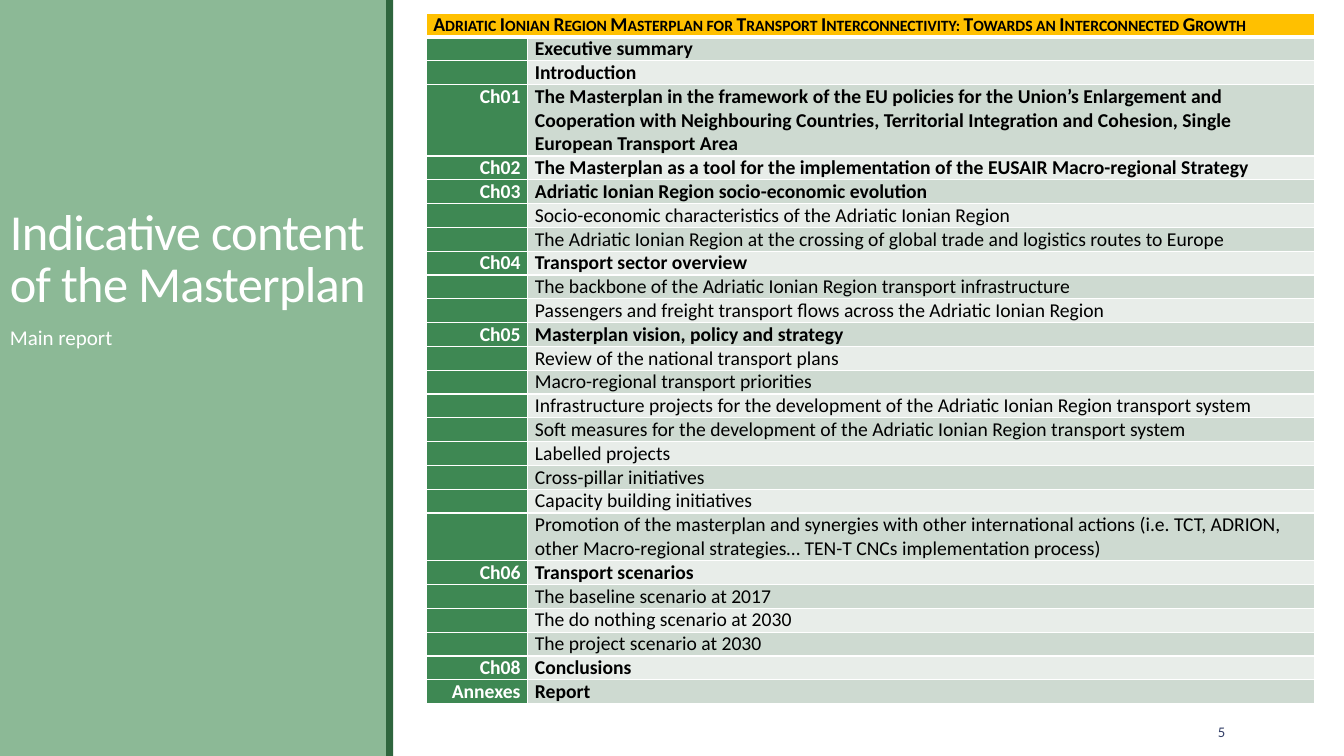
"""Build the slide listing the indicative content of the Masterplan main report."""
from math import ceil

from lxml.etree import SubElement
from pptx import Presentation
from pptx.dml.color import RGBColor
from pptx.enum.shapes import MSO_SHAPE
from pptx.enum.text import MSO_ANCHOR, PP_ALIGN
from pptx.oxml.ns import qn
from pptx.util import Cm, Pt

TITLE = "Indicative content of the Masterplan"
SUBTITLE = "Main report"
PAGE_NUMBER = "5"
HEADING = "Adriatic Ionian Region Masterplan for Transport Interconnectivity: Towards an Interconnected Growth"
CHAPTERS = [
    ("", "Executive summary", []),
    ("", "Introduction", []),
    ("Ch01", "The Masterplan in the framework of the EU policies for the Union’s Enlargement and "
     "Cooperation with Neighbouring Countries, Territorial Integration and Cohesion, Single "
     "European Transport Area", []),
    ("Ch02", "The Masterplan as a tool for the implementation of the EUSAIR Macro-regional Strategy", []),
    ("Ch03", "Adriatic Ionian Region socio-economic evolution", [
        "Socio-economic characteristics of the Adriatic Ionian Region",
        "The Adriatic Ionian Region at the crossing of global trade and logistics routes to Europe",
    ]),
    ("Ch04", "Transport sector overview", [
        "The backbone of the Adriatic Ionian Region transport infrastructure",
        "Passengers and freight transport flows across the Adriatic Ionian Region",
    ]),
    ("Ch05", "Masterplan vision, policy and strategy", [
        "Review of the national transport plans",
        "Macro-regional transport priorities",
        "Infrastructure projects for the development of the Adriatic Ionian Region transport system",
        "Soft measures for the development of the Adriatic Ionian Region transport system",
        "Labelled projects",
        "Cross-pillar initiatives",
        "Capacity building initiatives",
        "Promotion of the masterplan and synergies with other international actions (i.e. TCT, ADRION, "
        "other Macro-regional strategies… TEN-T CNCs implementation process)",
    ]),
    ("Ch06", "Transport scenarios", [
        "The baseline scenario at 2017",
        "The do nothing scenario at 2030",
        "The project scenario at 2030",
    ]),
    ("Ch08", "Conclusions", []),
    ("Annexes", "Report", []),
]

FONT = "Calibri"
WHITE = RGBColor(0xFF, 0xFF, 0xFF)
BLACK = RGBColor(0x00, 0x00, 0x00)
NAVY = RGBColor(0x34, 0x40, 0x68)
PANEL_GREEN = RGBColor(0x8C, 0xB9, 0x96)
EDGE_GREEN = RGBColor(0x2F, 0x66, 0x3E)
LABEL_GREEN = RGBColor(0x3E, 0x88, 0x53)
AMBER = RGBColor(0xFF, 0xC0, 0x00)
BANDS = [RGBColor(0xCE, 0xDA, 0xD1), RGBColor(0xE8, 0xED, 0xE9)]

SLIDE_WIDTH, SLIDE_HEIGHT = 33.87, 19.05
PANEL_WIDTH, EDGE_WIDTH = 9.73, 0.18
TABLE_LEFT, TABLE_TOP = 10.74, 0.33
COLUMN_WIDTHS = [2.56, 19.84]
LINE_HEIGHT, LINE_CHARACTERS = 0.6, 90
CELL_SIZE = 14


def write_text(frame, text, size=CELL_SIZE, color=BLACK, bold=False, align=PP_ALIGN.LEFT,
               line_spacing=None, tracking=None, small_caps=False):
    frame.word_wrap = True
    paragraph = frame.paragraphs[0]
    paragraph.alignment = align
    if line_spacing:
        paragraph.line_spacing = line_spacing
    if not text:
        paragraph._p.get_or_add_endParaRPr().set("sz", str(size * 100))
        return
    run = paragraph.add_run()
    run.text = text
    run.font.name = FONT
    run.font.size = Pt(size)
    run.font.bold = bold
    run.font.color.rgb = color
    if tracking is not None:
        run.font._element.set("spc", str(int(tracking * 100)))
    if small_caps:
        run.font._element.set("cap", "small")


def add_panel(slide, left, width, color):
    shape = slide.shapes.add_shape(MSO_SHAPE.RECTANGLE, Cm(left), Cm(0), Cm(width), Cm(SLIDE_HEIGHT))
    shape.shadow.inherit = False
    shape.fill.solid()
    shape.fill.fore_color.rgb = color
    shape.line.fill.background()


def add_text_box(slide, left, top, width, height, text, anchor=MSO_ANCHOR.TOP, **text_format):
    box = slide.shapes.add_textbox(Cm(left), Cm(top), Cm(width), Cm(height))
    box.text_frame.vertical_anchor = anchor
    write_text(box.text_frame, text, **text_format)


def style_cell(cell, color, top_border=1, bottom_border=1):
    cell.margin_left = cell.margin_right = Cm(0.18)
    cell.margin_top = cell.margin_bottom = Cm(0)
    properties = cell._tc.get_or_add_tcPr()
    for side, width in (("L", 1), ("R", 1), ("T", top_border), ("B", bottom_border)):
        line = SubElement(properties, qn(f"a:ln{side}"), w=str(Pt(width)))
        SubElement(SubElement(line, qn("a:solidFill")), qn("a:srgbClr"), val=str(WHITE))
    cell.fill.solid()
    cell.fill.fore_color.rgb = color


def add_contents_table(slide):
    entries = []
    for label, chapter, sections in CHAPTERS:
        entries.append((label, chapter, True))
        entries.extend(("", section, False) for section in sections)
    line_counts = [1] + [ceil(len(text) / LINE_CHARACTERS) for _, text, _ in entries]
    table = slide.shapes.add_table(
        len(line_counts), len(COLUMN_WIDTHS), Cm(TABLE_LEFT), Cm(TABLE_TOP),
        Cm(sum(COLUMN_WIDTHS)), Cm(sum(line_counts) * LINE_HEIGHT)).table
    table.first_row = table.horz_banding = False
    for column, width in zip(table.columns, COLUMN_WIDTHS):
        column.width = Cm(width)
    for row, count in zip(table.rows, line_counts):
        row.height = Cm(count * LINE_HEIGHT)

    heading = table.cell(0, 0)
    for column in range(len(COLUMN_WIDTHS)):
        style_cell(table.cell(0, column), AMBER, bottom_border=3)
    heading.merge(table.cell(0, 1))
    write_text(heading.text_frame, HEADING, bold=True, small_caps=True)
    for index, (label, text, is_chapter) in enumerate(entries):
        label_cell, text_cell = table.rows[index + 1].cells
        top_border = 3 if index == 0 else 1
        style_cell(label_cell, LABEL_GREEN, top_border)
        style_cell(text_cell, BANDS[index % 2], top_border)
        write_text(label_cell.text_frame, label, color=WHITE, bold=True, align=PP_ALIGN.RIGHT)
        write_text(text_cell.text_frame, text, bold=is_chapter)


def main():
    presentation = Presentation()
    presentation.slide_width = Cm(SLIDE_WIDTH)
    presentation.slide_height = Cm(SLIDE_HEIGHT)
    slide = presentation.slides.add_slide(presentation.slide_layouts[6])
    add_panel(slide, 0, PANEL_WIDTH, PANEL_GREEN)
    add_panel(slide, PANEL_WIDTH, EDGE_WIDTH, EDGE_GREEN)
    add_text_box(slide, 0, 1.65, PANEL_WIDTH, 6.35, TITLE, MSO_ANCHOR.BOTTOM,
                 size=36, color=WHITE, line_spacing=0.85, tracking=-0.5)
    add_contents_table(slide)
    add_text_box(slide, 0, 8.13, PANEL_WIDTH, 9.4, SUBTITLE,
                 size=15, color=WHITE, line_spacing=0.9)
    add_text_box(slide, 27.5, 17.93, 3.63, 1.02, PAGE_NUMBER, MSO_ANCHOR.MIDDLE,
                 size=10.5, color=NAVY, align=PP_ALIGN.RIGHT)
    presentation.save("out.pptx")


if __name__ == "__main__":
    main()
